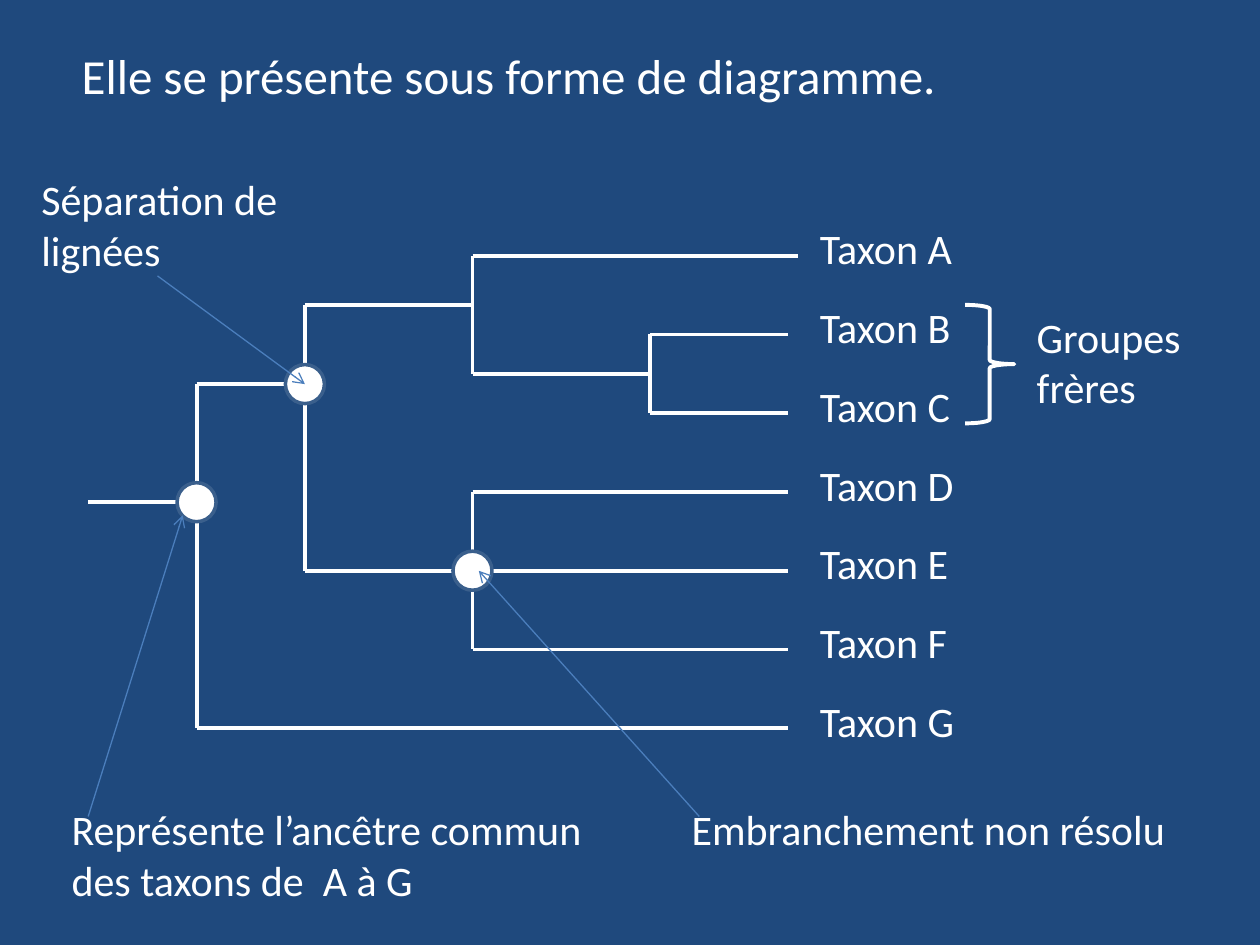
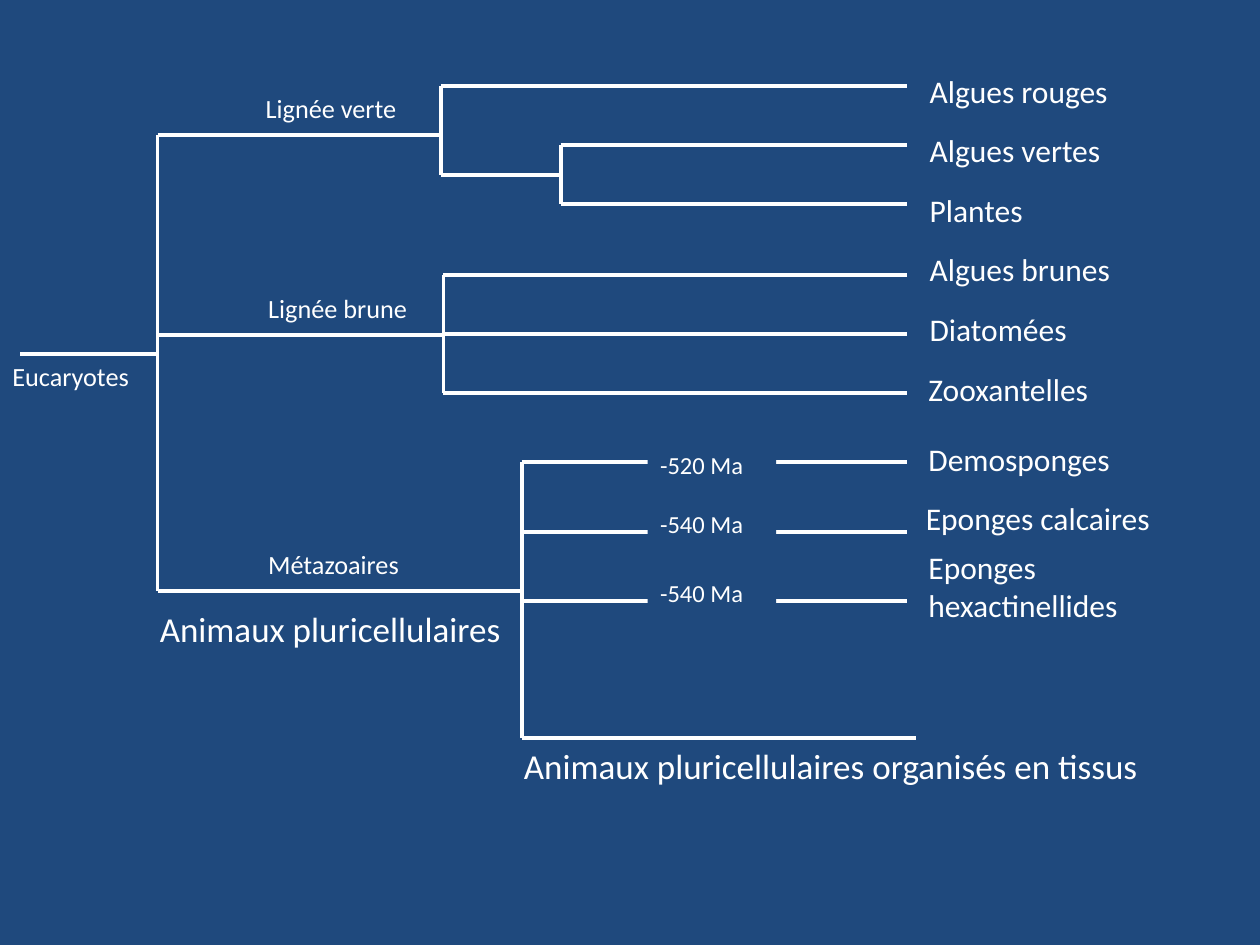
from lxml import etree
from pptx import Presentation, util as u
from pptx.dml.color import RGBColor
from pptx.enum import shapes, text
from pptx.oxml.ns import qn

NAVY = RGBColor(0x1F, 0x49, 0x7D)
WHITE = RGBColor(0xFF, 0xFF, 0xFF)
RIM = RGBColor(0x3A, 0x5F, 0x8C)
BLUE = RGBColor(0x4B, 0x7E, 0xBC)

FONT = "Calibri"
BRANCH = 2.25
DOT = 0.31


def inches(*sizes):
    return [u.Inches(size) for size in sizes]


def add_slide(deck):
    slide = deck.slides.add_slide(deck.slide_layouts[6])
    slide.background.fill.solid()
    slide.background.fill.fore_color.rgb = NAVY
    return slide


# Lines
def add_line(slide, start, end, color=WHITE, width=BRANCH, arrow=False):
    line = slide.shapes.add_connector(
        shapes.MSO_CONNECTOR.STRAIGHT, *inches(*start, *end))
    line.line.color.rgb = color
    line.line.width = u.Pt(width)
    props = line._element.spPr
    if arrow:
        etree.SubElement(props.find(qn("a:ln")), qn("a:tailEnd"), type="arrow")
    etree.SubElement(props, qn("a:effectLst"))


def add_fork(slide, x, twigs):
    """Draw an upright at x and one twig per (height, right end)."""
    tops = [y for y, _ in twigs]
    add_line(slide, (x, min(tops)), (x, max(tops)))
    for y, end in twigs:
        add_line(slide, (x, y), (end, y))


def add_arrow(slide, start, end):
    add_line(slide, start, end, BLUE, 0.75, arrow=True)


# Shapes
def add_shape(slide, kind, box, rim, width):
    shape = slide.shapes.add_shape(kind, *inches(*box))
    shape.shadow.inherit = False
    shape.line.color.rgb = rim
    shape.line.width = u.Pt(width)
    return shape


def add_node(slide, x, y):
    box = (x - DOT / 2, y - DOT / 2, DOT, DOT)
    dot = add_shape(slide, shapes.MSO_SHAPE.OVAL, box, RIM, 2)
    dot.fill.solid()
    dot.fill.fore_color.rgb = WHITE


def add_brace(slide, box):
    brace = add_shape(slide, shapes.MSO_SHAPE.RIGHT_BRACE, box, WHITE, BRANCH)
    brace.fill.background()


# Text
def add_text(slide, words, box, size, wrap=True):
    label = slide.shapes.add_textbox(*inches(*box))
    frame = label.text_frame
    frame.text = words
    frame.word_wrap = wrap
    frame.auto_size = text.MSO_AUTO_SIZE.SHAPE_TO_FIT_TEXT
    font = frame.paragraphs[0].runs[0].font
    for name, value in {"name": FONT, "size": u.Pt(size)}.items():
        setattr(font, name, value)
    font.color.rgb = WHITE
    return label


def add_date(slide, words, y):
    """Cover part of a twig with a date."""
    date = add_text(slide, words, (5.14, y, 1.02, 0.33), 14)
    date.fill.solid()
    date.fill.fore_color.rgb = NAVY


def draw_taxa(deck):
    slide = add_slide(deck)
    tip = 6.25

    def row(n):
        return 2.03 + 0.625 * n

    # Tree
    root, split, knot, pair = 1.56, 2.42, 3.75, 5.16
    base, fork = row(3.13), row(1.63)
    add_line(slide, (0.7, base), (root, base))
    add_fork(slide, root, [(fork, split), (row(6), tip)])
    add_fork(slide, split, [(row(0.63), knot), (row(4), tip)])
    add_fork(slide, knot, [(row(0), 6.33), (row(1.5), pair)])
    add_fork(slide, pair, [(row(1), tip), (row(2), tip)])
    add_fork(slide, knot, [(row(3), tip), (row(5), tip)])

    for n, letter in enumerate("ABCDEFG"):
        add_text(slide, f"Taxon {letter}", (6.41, row(n) - 0.31, 1.64, 0.5), 24)

    # Nodes and the arrows to them
    for x, y in [(root, base), (knot, row(4)), (split, fork)]:
        add_node(slide, x, y)
    add_arrow(slide, (0.7, 6.48), (1.45, 4.09))
    add_arrow(slide, (5.55, 6.48), (3.8, row(4)))
    add_arrow(slide, (1.25, 2.19), (split, fork))
    add_brace(slide, (7.66, 2.42, 0.39, 0.94))

    # Title and notes on the tree
    add_text(slide, "Elle se présente sous forme de diagramme.",
             (0.55, 0.31, 8.52, 1.04), 28)
    for words, box in [
        ("Séparation de lignées", (0.23, 1.33, 2.73, 0.91)),
        ("Groupes frères", (8.13, 2.42, 1.64, 0.91)),
        ("Représente l’ancêtre commun des taxons de  A à G",
         (0.47, 6.33, 4.3, 0.91)),
        ("Embranchement non résolu", (5.39, 6.33, 4.3, 0.5)),
    ]:
        add_text(slide, words, box, 24)


def draw_life(deck):
    slide = add_slide(deck)
    tip = 7.2

    # Tree
    root, green, plant, brown, animal = 1.25, 3.5, 4.45, 3.52, 4.14
    greens = [0.68 + 0.47 * n for n in range(3)]
    browns = [2.18 + 0.47 * n for n in range(3)]
    sponges = [3.67 + 0.55 * n for n in range(3)]
    tissue = 5.86
    add_line(slide, (0.16, 2.81), (root, 2.81))
    add_fork(slide, root, [(1.07, green), (2.66, brown), (4.69, animal)])
    add_fork(slide, green, [(greens[0], tip), (1.39, plant)])
    add_fork(slide, plant, [(y, tip) for y in greens[1:]])
    add_fork(slide, brown, [(y, tip) for y in browns])
    add_fork(slide, animal, [(y, tip) for y in sponges] + [(tissue, 7.27)])

    # Dates on the sponge twigs
    for words, y in [("-520 Ma", 3.52), ("-540 Ma", 3.99), ("-540 Ma", 4.54)]:
        add_date(slide, words, y)

    # Names at the tips
    algae = ["Algues rouges", "Algues vertes", "Plantes",
             "Algues brunes", "Diatomées"]
    for n, name in enumerate(algae):
        add_text(slide, name, (7.28, 0.52 + 0.4725 * n, 1.73, 0.41), 18)
    for name, x, y, width, height in [
        ("Zooxantelles", 7.27, 2.89, 1.65, 0.41),
        ("Demosponges", 7.27, 3.44, 1.65, 0.41),
        ("Eponges calcaires", 7.25, 3.91, 2.17, 0.41),
        ("Eponges hexactinellides", 7.27, 4.3, 1.86, 0.71),
    ]:
        add_text(slide, name, (x, y, width, height), 18)

    # Names of the lineages
    for name, x, y, width in [
        ("Lignée verte", 2.01, 0.68, 1.25),
        ("Lignée brune", 2.03, 2.27, 1.31),
        ("Métazoaires", 2.03, 4.3, 1.25),
        ("Eucaryotes", 0, 2.81, 1.13),
    ]:
        add_text(slide, name, (x, y, width, 0.36), 15, wrap=False)
    add_text(slide, "Animaux pluricellulaires", (1.17, 4.77, 2.97, 0.44), 20)
    add_text(slide, "Animaux pluricellulaires organisés en tissus",
             (4.06, tissue, 5.7, 0.44), 20)


def main():
    deck = Presentation()
    deck.slide_width, deck.slide_height = inches(10, 7.5)
    draw_taxa(deck)
    draw_life(deck)
    deck.save("out.pptx")


if __name__ == "__main__":
    main()
